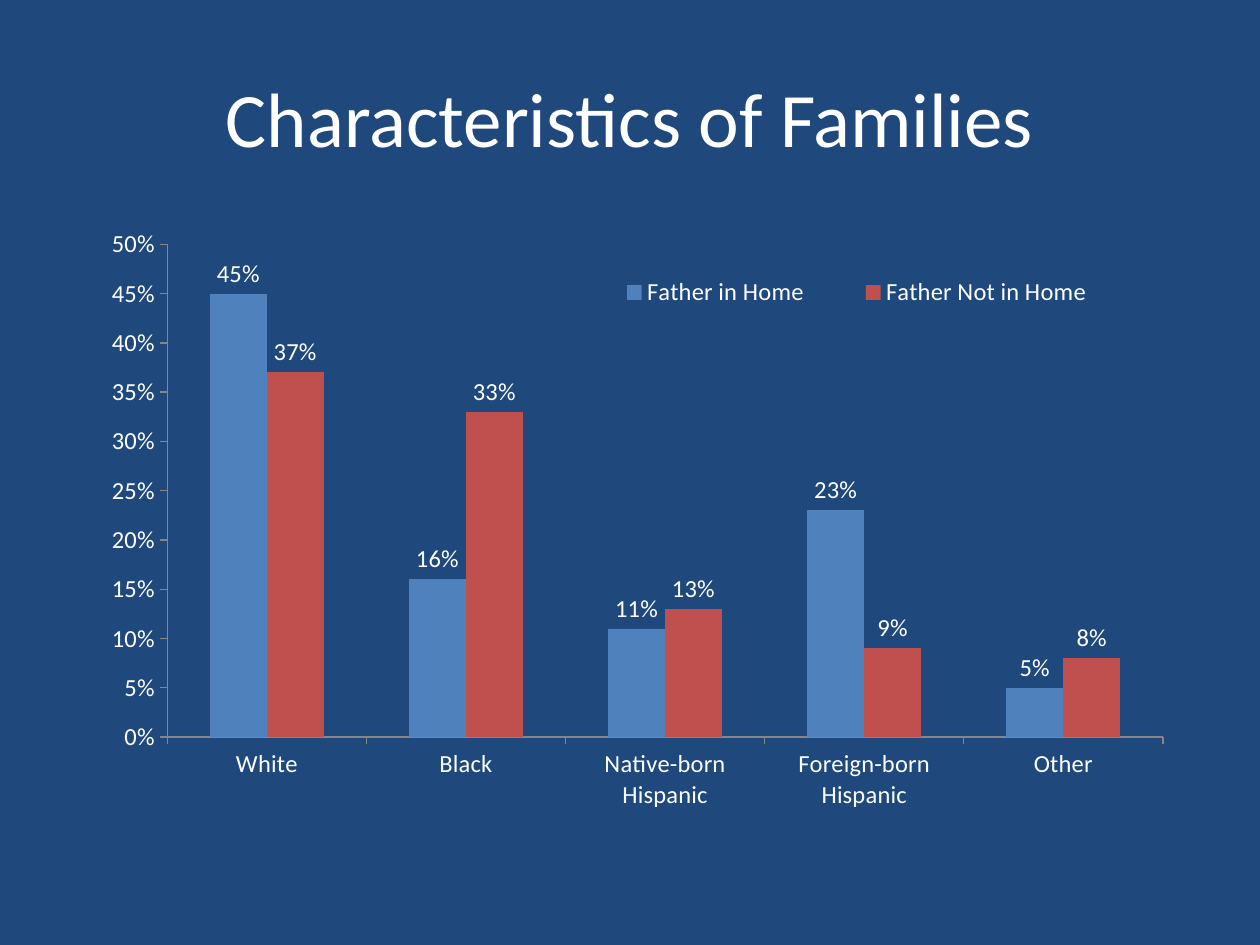
from dataclasses import dataclass

from pptx import Presentation
from pptx.chart.data import CategoryChartData as ChartData
from pptx.dml.color import RGBColor as Rgb
from pptx.enum.chart import XL_CHART_TYPE as ChartType
from pptx.enum.chart import XL_LABEL_POSITION as LabelPosition
from pptx.enum.chart import XL_LEGEND_POSITION as LegendPosition
from pptx.enum.chart import XL_TICK_MARK as TickMark
from pptx.enum.text import MSO_ANCHOR as Anchor
from pptx.enum.text import PP_ALIGN as Align
from pptx.oxml import parse_xml
from pptx.oxml.ns import nsdecls, qn
from pptx.util import Cm, Pt


@dataclass(frozen=True)
class Theme:
    """Colours and type sizes of the slide."""
    background: Rgb = Rgb(0x1F, 0x49, 0x7D)
    text: Rgb = Rgb(0xFF, 0xFF, 0xFF)
    axis: Rgb = Rgb(0x86, 0x86, 0x86)
    father_home: Rgb = Rgb(0x4F, 0x81, 0xBD)
    father_away: Rgb = Rgb(0xC0, 0x50, 0x4D)
    font: str = "Calibri"
    title_size: Pt = Pt(44)
    chart_size: Pt = Pt(14)


THEME = Theme()
PERCENT = "0%"
ETHNICITIES = ["White", "Black", "Native-born Hispanic", "Foreign-born Hispanic", "Other"]
FAMILIES = [
    ("Father in Home", (0.45, 0.16, 0.11, 0.23, 0.05), THEME.father_home),
    ("Father Not in Home", (0.37, 0.33, 0.13, 0.09, 0.08), THEME.father_away),
]


def apply_format(target, values):
    """Set each attribute named in the dict on the target."""
    for attribute, value in values.items():
        setattr(target, attribute, value)


def format_font(font, size):
    """Give a font the theme's typeface and text colour."""
    apply_format(font, {"name": THEME.font, "size": size, "bold": False})
    font.color.rgb = THEME.text


def manual_layout(box, inner=False):
    """Return a chart layout element for a box in fractions of the chart."""
    target = '<c:layoutTarget val="inner"/>' if inner else ""
    modes = "".join(f'<c:{axis}Mode val="edge"/>' for axis in "xy")
    places = "".join(f'<c:{side} val="{value}"/>' for side, value in zip("xywh", box))
    return parse_xml(f'<c:layout {nsdecls("c")}><c:manualLayout>{target}{modes}{places}'
                     "</c:manualLayout></c:layout>")


def drop_layout(parent):
    """Remove any layout element a chart part already has."""
    for layout in parent.findall(qn("c:layout")):
        parent.remove(layout)


def add_title(slide, box):
    """Place and format the slide title in the box."""
    title = slide.shapes.title
    apply_format(title, dict(zip(("left", "top", "width", "height"), box)))
    frame = title.text_frame
    apply_format(frame, {"text": "Characteristics of Families",
                         "vertical_anchor": Anchor.MIDDLE, "word_wrap": True})
    heading = frame.paragraphs[0]
    heading.alignment = Align.CENTER
    format_font(heading.runs[0].font, THEME.title_size)


def format_axes(chart):
    """Style the ethnicity axis and the share axis."""
    for axis in (chart.category_axis, chart.value_axis):
        apply_format(axis, {"has_major_gridlines": False,
                            "major_tick_mark": TickMark.OUTSIDE,
                            "minor_tick_mark": TickMark.NONE})
        format_font(axis.tick_labels.font, THEME.chart_size)
        axis.format.line.color.rgb = THEME.axis
        axis.format.line.width = Pt(0.75)
    apply_format(chart.value_axis, {"minimum_scale": 0, "maximum_scale": 0.5,
                                    "major_unit": 0.05})
    apply_format(chart.value_axis.tick_labels,
                 {"number_format": PERCENT, "number_format_is_linked": False})


def format_bars(plot):
    """Colour the columns and label them with their shares."""
    apply_format(plot, {"gap_width": 150, "overlap": 0, "vary_by_categories": False})
    for bars, (_, _, colour) in zip(plot.series, FAMILIES):
        bars.invert_if_negative = False
        bars.format.fill.solid()
        bars.format.fill.fore_color.rgb = colour
        labels = bars.data_labels
        apply_format(labels, {"show_value": True, "number_format": PERCENT,
                              "number_format_is_linked": False,
                              "position": LabelPosition.OUTSIDE_END})
        format_font(labels.font, THEME.chart_size)


def format_legend(chart):
    """Lay the legend over the upper right of the plot."""
    chart.has_legend = True
    legend = chart.legend
    apply_format(legend, {"position": LegendPosition.TOP, "include_in_layout": False})
    format_font(legend.font, THEME.chart_size)
    element = legend._element
    drop_layout(element)
    element.find(qn("c:legendPos")).addnext(manual_layout((0.45, 0.08, 0.5, 0.07)))


def add_family_chart(slide, box):
    """Draw the clustered columns of family ethnicity in the box."""
    shares = ChartData(number_format=PERCENT)
    shares.categories = ETHNICITIES
    for name, values, _ in FAMILIES:
        shares.add_series(name, values)
    chart = slide.shapes.add_chart(ChartType.COLUMN_CLUSTERED, *box, shares).chart
    chart.has_title = False
    format_font(chart.font, THEME.chart_size)
    format_axes(chart)
    format_bars(chart.plots[0])
    format_legend(chart)
    plot_area = chart._chartSpace.chart.plotArea
    drop_layout(plot_area)
    plot_area.insert(0, manual_layout((0.092, 0.038, 0.878, 0.79), inner=True))


def main():
    """Build the slide and save it."""
    deck = Presentation()
    apply_format(deck, {"slide_width": Cm(25.4), "slide_height": Cm(19.05)})
    slide = deck.slides.add_slide(deck.slide_layouts.get_by_name("Title Only"))
    slide.background.fill.solid()
    slide.background.fill.fore_color.rgb = THEME.background
    margin = Cm(1.27)
    content_width = deck.slide_width - 2 * margin
    add_title(slide, (margin, Cm(0.76), content_width, Cm(3.18)))
    add_family_chart(slide, (margin, Cm(4.45), content_width, Cm(12.57)))
    deck.save("out.pptx")


if __name__ == "__main__":
    main()
